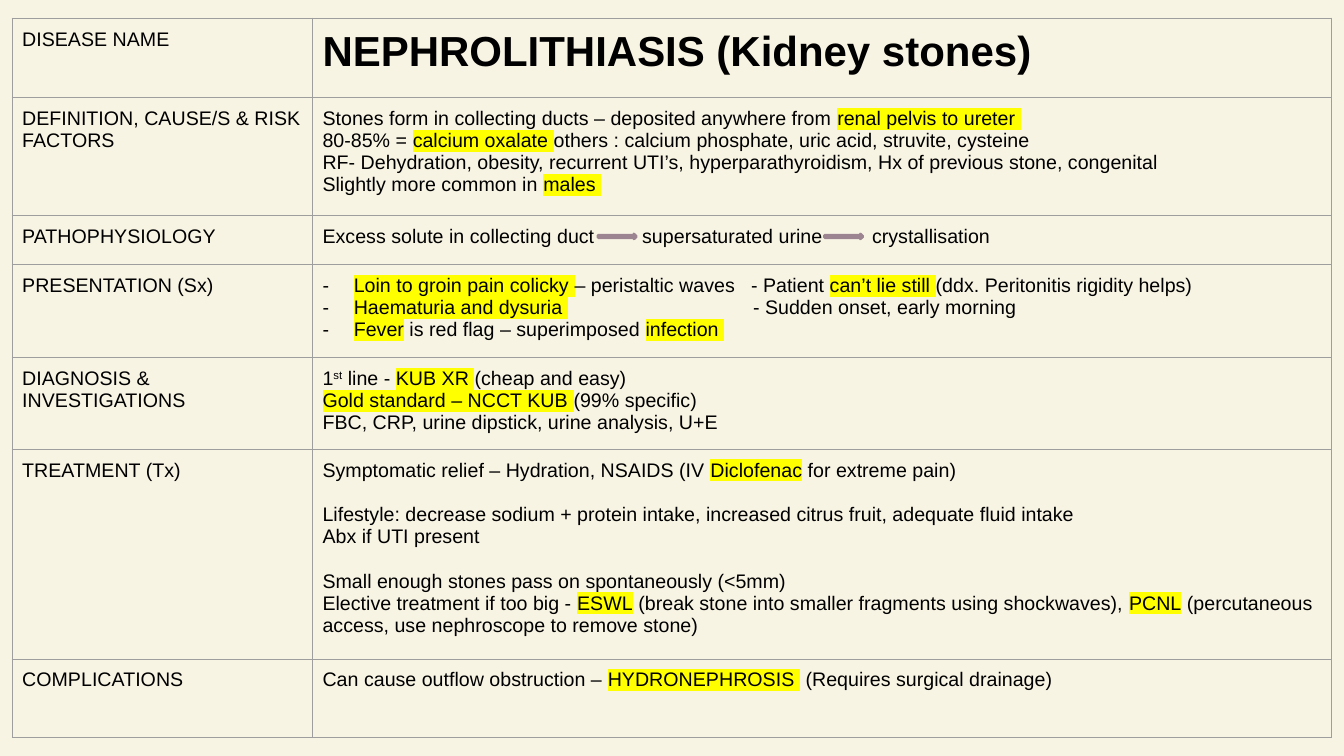
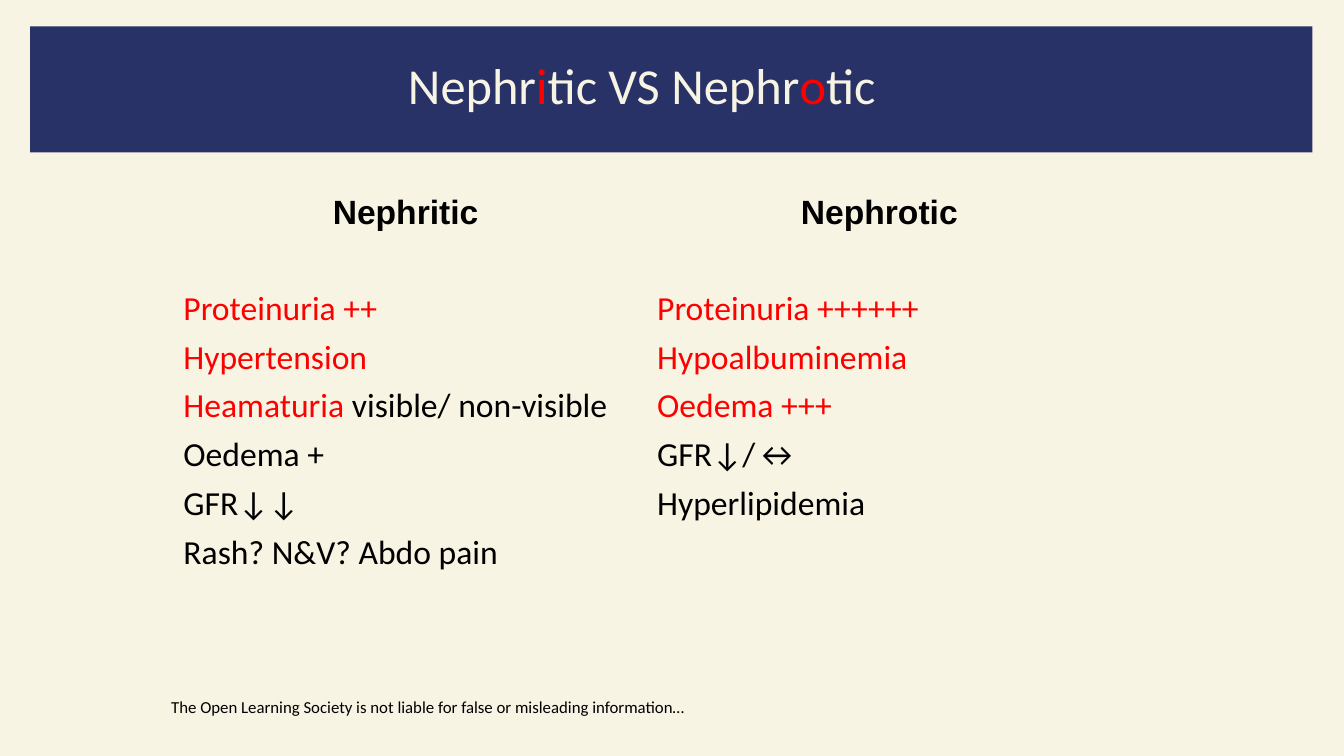
from dataclasses import dataclass

import pptx
import pptx.dml.color
import pptx.enum.shapes
import pptx.enum.text
import pptx.oxml
import pptx.oxml.ns
import pptx.util
from lxml import etree

ALIGN = pptx.enum.text.PP_ALIGN
ANCHOR = pptx.enum.text.MSO_ANCHOR
SHAPE = pptx.enum.shapes.MSO_SHAPE
WIDTH, HEIGHT = pptx.util.Inches(13.33), pptx.util.Inches(7.5)


@dataclass(frozen=True)
class Theme:
    paper: str = "F8F4E4"
    navy: str = "293267"
    ink: str = "000000"
    red: str = "FF0000"
    marker: str = "FFFF00"
    grid: str = "9E9E9E"
    arrow_fill: str = "D7B5C6"
    arrow_line: str = "9C8490"
    note_font: str = "Arial"
    body_font: str = "Calibri"
    small: int = 12
    note: int = 14
    body: int = 24
    heading: int = 30
    title: int = 36


THEME = Theme()


@dataclass(frozen=True)
class Style:
    """Base look of a text; marked parts get a highlight or another colour."""
    font: str
    size: int
    color: str = THEME.ink
    bold: bool = False
    align: object = ALIGN.LEFT
    mark_color: str = ""
    highlight: str = ""
    gap: float = 0


NOTE = Style(THEME.note_font, THEME.note, highlight=THEME.marker)
HEADING = Style(THEME.note_font, THEME.heading, bold=True)
COLUMN_HEAD = Style(THEME.note_font, THEME.body, bold=True, align=ALIGN.CENTER)
FEATURES = Style(THEME.body_font, THEME.body, mark_color=THEME.red, gap=5.6)
TITLE = Style(THEME.body_font, THEME.title, THEME.paper, align=ALIGN.CENTER,
              mark_color=THEME.red)
DISCLAIMER = Style(THEME.body_font, THEME.small)


@dataclass(frozen=True)
class Line:
    """A paragraph: *marked* and ^raised^ parts, tab stops in inches."""
    text: str
    before: float = 0
    bullet: bool = False
    tabs: tuple = ()


DISEASE_ROWS = [
    ("DISEASE NAME", ["NEPHROLITHIASIS (Kidney stones)"]),
    ("DEFINITION, CAUSE/S & RISK FACTORS", [
        "Stones form in collecting ducts – deposited anywhere from *renal pelvis to ureter *",
        "80-85% = *calcium oxalate *others : calcium phosphate, uric acid, struvite, cysteine",
        "RF- Dehydration, obesity, recurrent UTI’s, hyperparathyroidism, "
        "Hx of previous stone, congenital",
        "Slightly more common in *males *"]),
    ("PATHOPHYSIOLOGY", [
        Line("Excess solute in collecting duct\tsupersaturated urine\tcrystallisation",
             tabs=(3.17, 5.45))]),
    ("PRESENTATION (Sx)", [
        Line("*Loin to groin pain colicky *– peristaltic waves\t- Patient *can’t lie still *"
             "(ddx. Peritonitis rigidity helps)", bullet=True, tabs=(4.25,)),
        Line("*Haematuria and dysuria *\t- Sudden onset, early morning",
             bullet=True, tabs=(4.27,)),
        Line("*Fever* is red flag – superimposed *infection *", bullet=True)]),
    ("DIAGNOSIS & INVESTIGATIONS", [
        "1^st^ line - *KUB XR *(cheap and easy)",
        "*Gold standard – NCCT KUB *(99% specific)",
        "FBC, CRP, urine dipstick, urine analysis, U+E"]),
    ("TREATMENT (Tx)", [
        "Symptomatic relief – Hydration, NSAIDS (IV *Diclofenac* for extreme pain)",
        Line("Lifestyle: decrease sodium + protein intake, increased citrus fruit, "
             "adequate fluid intake", before=16),
        "Abx if UTI present",
        Line("Small enough stones pass on spontaneously (<5mm)", before=16),
        "Elective treatment if too big - *ESWL* (break stone into smaller fragments using "
        "shockwaves), *PCNL* (percutaneous access, use nephroscope to remove stone)"]),
    ("COMPLICATIONS", [
        "Can cause outflow obstruction – *HYDRONEPHROSIS * (Requires surgical drainage)"]),
]

SYNDROMES = {
    "Nephritic ": ["*Proteinuria ++*", "*Hypertension*",
                   "*Heamaturia* visible/ non-visible", "Oedema +", "GFR↓↓",
                   "Rash? N&V? Abdo pain"],
    "Nephrotic ": ["*Proteinuria ++++++*", "*Hypoalbuminemia*", "*Oedema +++*",
                   "GFR↓/↔", "Hyperlipidemia"],
}


def across(percent):
    return round(WIDTH * percent / 100)


def down(percent):
    return round(HEIGHT * percent / 100)


def place(left, top, width, height):
    """Turn shares of the slide, in percent, into a position and size."""
    return across(left), down(top), across(width), down(height)


def rgb(color):
    return pptx.dml.color.RGBColor.from_string(color)


def set_all(target, values):
    for name, value in values.items():
        setattr(target, name, value)


def add_xml(parent, tag, **attributes):
    return etree.SubElement(parent, pptx.oxml.ns.qn(tag), attributes)


def add_span(para, text, style, marked, raised):
    span = para.add_run()
    span.text = text
    set_all(span.font, {"name": style.font, "size": pptx.util.Pt(style.size),
                        "bold": style.bold})
    color = style.mark_color if marked and style.mark_color else style.color
    span.font.color.rgb = rgb(color)
    props = span._r.get_or_add_rPr()
    if raised:
        props.set("baseline", "30000")
    if marked and style.highlight:
        highlight = add_xml(props, "a:highlight")
        add_xml(highlight, "a:srgbClr", val=style.highlight)
        props.find(pptx.oxml.ns.qn("a:latin")).addprevious(highlight)


def format_para(para, line):
    """Add the dash bullet and the tab stops."""
    props = para._p.get_or_add_pPr()
    if line.bullet:
        hang = pptx.util.Inches(0.31)
        props.set("marL", str(hang))
        props.set("indent", str(-hang))
        add_xml(add_xml(props, "a:buClr"), "a:srgbClr", val=THEME.ink)
        add_xml(props, "a:buFont", typeface=THEME.note_font)
        add_xml(props, "a:buChar", char="-")
    if line.tabs:
        stops = add_xml(props, "a:tabLst")
        for stop in line.tabs:
            add_xml(stops, "a:tab", pos=str(pptx.util.Inches(stop)), algn="l")


def write(frame, lines, style):
    frame.word_wrap = True
    for index, entry in enumerate(lines):
        line = entry if isinstance(entry, Line) else Line(entry)
        para = frame.add_paragraph() if index else frame.paragraphs[0]
        before = line.before or (style.gap if index else 0)
        set_all(para, {"alignment": style.align, "space_before": pptx.util.Pt(before)})
        format_para(para, line)
        for part, piece in enumerate(line.text.split("*")):
            for level, text in enumerate(piece.split("^")):
                if text:
                    add_span(para, text, style, part % 2 == 1, level % 2 == 1)


def set_borders(cell, color):
    """Draw all four edges in a colour, or clear them when it is None."""
    props = cell._tc.get_or_add_tcPr()
    for index, side in enumerate(("a:lnL", "a:lnR", "a:lnT", "a:lnB")):
        edge = pptx.oxml.parse_xml(
            f'<{side} {pptx.oxml.ns.nsdecls("a")} w="{pptx.util.Pt(0.75)}"/>')
        if color:
            add_xml(add_xml(edge, "a:solidFill"), "a:srgbClr", val=color)
        else:
            add_xml(edge, "a:noFill")
        props.insert(index, edge)


def add_grid(slide, left, top, columns, rows, cells, border=None):
    """Add a plain table; cells holds rows of (lines, style) pairs."""
    area = place(left, top, sum(columns), sum(rows))
    table = slide.shapes.add_table(len(rows), len(columns), *area).table
    set_all(table, {"first_row": False, "horz_banding": False})
    for column, share in zip(table.columns, columns):
        column.width = across(share)
    for row, share, contents in zip(table.rows, rows, cells):
        row.height = down(share)
        for cell, (lines, style) in zip(row.cells, contents):
            set_all(cell, {f"margin_{side}": pptx.util.Inches(0.1)
                           for side in ("left", "right", "top", "bottom")})
            cell.vertical_anchor = ANCHOR.TOP
            cell.fill.background()
            set_borders(cell, border)
            write(cell.text_frame, lines, style)


def add_block(slide, kind, area, fill, line=None):
    block = slide.shapes.add_shape(kind, *area)
    block.shadow.inherit = False
    block.fill.solid()
    block.fill.fore_color.rgb = rgb(fill)
    if line:
        block.line.color.rgb = rgb(line)
        block.line.width = pptx.util.Pt(2)
    else:
        block.line.fill.background()
    return block


def add_title_band(slide, text):
    band = add_block(slide, SHAPE.RECTANGLE, place(2.25, 3.5, 95.4, 16.65), THEME.navy)
    title = slide.shapes.title
    title._element.addprevious(band._element)
    left, top, width, height = place(22.3, 6.55, 51.75, 13.45)
    set_all(title, {"left": left, "top": top, "width": width, "height": height})
    set_all(title.text_frame, {"vertical_anchor": ANCHOR.TOP,
                               "auto_size": pptx.enum.text.MSO_AUTO_SIZE.NONE})
    write(title.text_frame, [text], TITLE)


def add_disclaimer(slide, text):
    box = slide.shapes.add_textbox(*place(12, 91.5, 41.55, 4))
    write(box.text_frame, [text], DISCLAIMER)


def build_disease_slide(deck):
    page = deck.slides.add_slide(deck.slide_layouts.get_by_name("Blank"))
    cells = [[([label], NOTE), (lines, NOTE if index else HEADING)]
             for index, (label, lines) in enumerate(DISEASE_ROWS)]
    add_grid(page, 0.9, 2.4, [22.35, 75.85],
             [10.5, 15.6, 6.55, 12.25, 12.15, 27.75, 10.4], cells, THEME.grid)
    for left in (44.5, 61.35):
        add_block(page, SHAPE.RIGHT_ARROW, place(left, 30.95, 2.85, 0.65),
                  THEME.arrow_fill, THEME.arrow_line)


def build_comparison_slide(deck):
    page = deck.slides.add_slide(deck.slide_layouts.get_by_name("Title Only"))
    add_title_band(page, "Nephr*i*tic VS Nephr*o*tic ")
    add_disclaimer(page, "The Open Learning Society is not liable for false or "
                         "misleading information…")
    cells = [[([name], COLUMN_HEAD) for name in SYNDROMES],
             [(lines, FEATURES) for lines in SYNDROMES.values()]]
    add_grid(page, 12.9, 24.4, [35.25] * 2, [12.4, 45.05], cells)


def main():
    deck = pptx.Presentation()
    set_all(deck, {"slide_width": WIDTH, "slide_height": HEIGHT})
    backdrop = deck.slide_master.background.fill
    backdrop.solid()
    backdrop.fore_color.rgb = rgb(THEME.paper)
    build_disease_slide(deck)
    build_comparison_slide(deck)
    deck.save("out.pptx")


if __name__ == "__main__":
    main()
